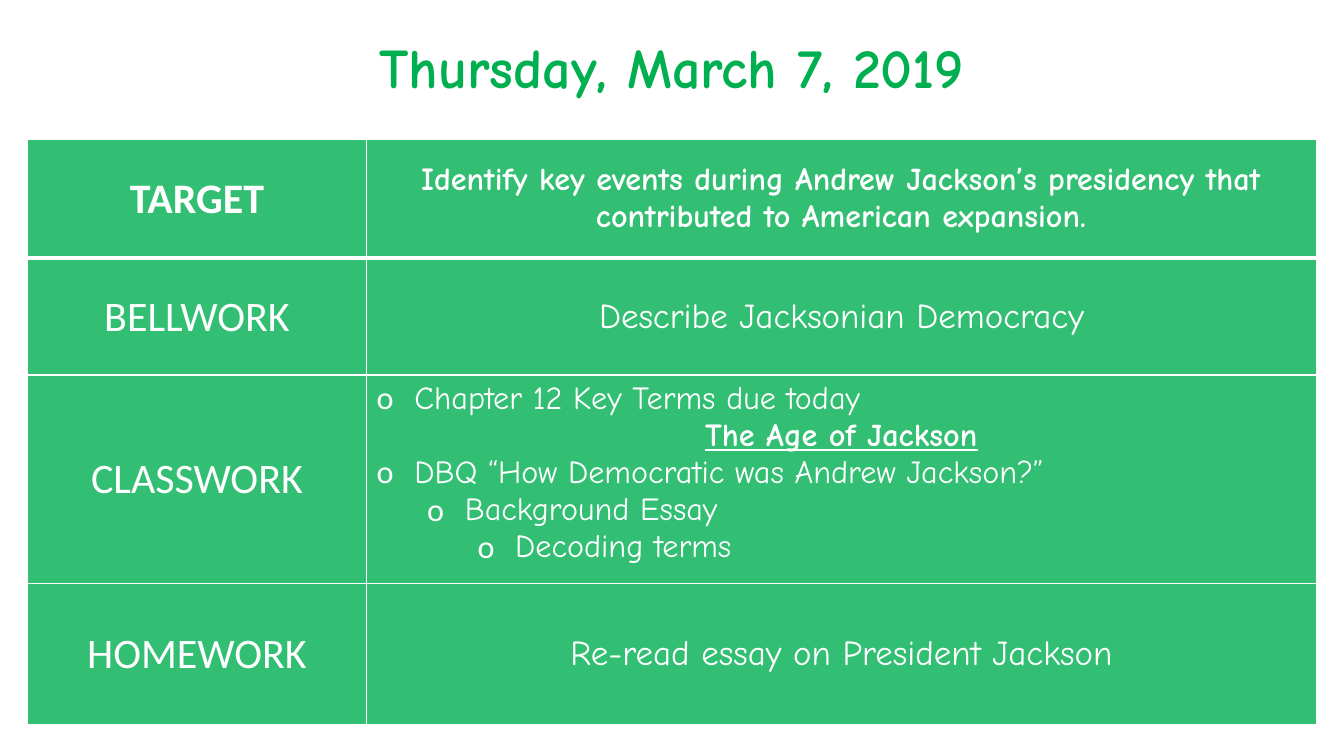
"""Build the daily agenda slide for a history class."""
import pptx
import pptx.dml.color
import pptx.enum.text
import pptx.oxml
import pptx.oxml.ns
import pptx.util
from pptx.util import Cm

GREEN = pptx.dml.color.RGBColor(0x00, 0xB0, 0x50)
WHITE = pptx.dml.color.RGBColor(0xFF, 0xFF, 0xFF)
CENTER = pptx.enum.text.PP_ALIGN.CENTER
LEFT = pptx.enum.text.PP_ALIGN.LEFT
MIDDLE = pptx.enum.text.MSO_ANCHOR.MIDDLE
TOP = pptx.enum.text.MSO_ANCHOR.TOP
NAMESPACE = pptx.oxml.ns.nsdecls("a")

COLUMN_WIDTHS = [8.55, 23.93]
ROW_HEIGHTS = [3, 2.94, 5.25, 3.56]
AGENDA = [
    ("TARGET", "Identify key events during Andrew Jackson’s presidency that contributed to American expansion.", 23),
    ("BELLWORK", "Describe Jacksonian Democracy", 25),
    ("CLASSWORK", "", 23),
    ("HOMEWORK", "Re-read essay on President Jackson", 25),
]
CLASSWORK = [
    ("Chapter 12 Key Terms due today", 0),
    ("The Age of Jackson", None),
    ("DBQ “How Democratic was Andrew Jackson?”", 0),
    ("Background Essay", 1),
    ("Decoding terms", 2),
]


def write_paragraph(paragraph, text, font_name, size, color, bold=False):
    paragraph.text = text
    paragraph.alignment = CENTER
    font = paragraph.runs[0].font
    font.name = font_name
    font.size = pptx.util.Pt(size)
    font.bold = bold
    font.color.rgb = color


def fill_translucent(fill, properties, color, opacity):
    fill.solid()
    fill.fore_color.rgb = color
    color_element = properties.find(".//" + pptx.oxml.ns.qn("a:srgbClr"))
    color_element.append(pptx.oxml.parse_xml(f'<a:alpha {NAMESPACE} val="{opacity * 1000}"/>'))


presentation = pptx.Presentation()
presentation.slide_width = Cm(33.87)
presentation.slide_height = Cm(19.05)
slide = presentation.slides.add_slide(presentation.slide_layouts[5])

title = slide.shapes.title
title.left, title.top, title.width, title.height = Cm(0.69), Cm(0.4), Cm(32.48), Cm(2.53)
fill_translucent(title.fill, title._element.spPr, WHITE, 65)
title.text_frame.auto_size = pptx.enum.text.MSO_AUTO_SIZE.NONE
title.text_frame.vertical_anchor = MIDDLE
write_paragraph(title.text_frame.paragraphs[0], "Thursday, March 7, 2019", "Comic Neue", 40, GREEN, True)

table = slide.shapes.add_table(
    len(AGENDA), 2, Cm(0.69), Cm(3.51), Cm(sum(COLUMN_WIDTHS)), Cm(sum(ROW_HEIGHTS))).table
for column, width in zip(table.columns, COLUMN_WIDTHS):
    column.width = Cm(width)

for row_index, (label, detail, size) in enumerate(AGENDA):
    table.rows[row_index].height = Cm(ROW_HEIGHTS[row_index])
    bold = row_index == 0
    cell_texts = [(label, "Calibri", 30), (detail, "Comic Neue", size)]
    for cell, (text, font_name, font_size) in zip(table.rows[row_index].cells, cell_texts):
        cell.vertical_anchor = MIDDLE
        properties = cell._tc.get_or_add_tcPr()
        fill_translucent(cell.fill, properties, GREEN, 80)
        for position, side in enumerate("LRTB"):
            thick = (row_index, side) in [(0, "B"), (1, "T")]
            width = pptx.util.Pt(3 if thick else 1)
            properties.insert(position, pptx.oxml.parse_xml(
                f'<a:ln{side} {NAMESPACE} w="{width}"><a:solidFill>'
                f'<a:srgbClr val="{WHITE}"/></a:solidFill></a:ln{side}>'))
        if text:
            write_paragraph(cell.text_frame.paragraphs[0], text, font_name, font_size, WHITE, bold)

classwork_cell = table.cell(2, 1)
classwork_cell.vertical_anchor = TOP
classwork_frame = classwork_cell.text_frame
for index, (text, level) in enumerate(CLASSWORK):
    paragraph = classwork_frame.add_paragraph() if index else classwork_frame.paragraphs[0]
    is_heading = level is None
    write_paragraph(paragraph, text, "Comic Neue", 23, WHITE, is_heading)
    if is_heading:
        paragraph.runs[0].font.underline = True
        continue
    paragraph.alignment = LEFT
    paragraph.level = level
    properties = paragraph._p.get_or_add_pPr()
    properties.set("marL", str(Cm(0.95 + 1.27 * level)))
    properties.set("indent", str(Cm(-0.95)))
    properties.append(pptx.oxml.parse_xml(f'<a:buFont {NAMESPACE} typeface="Calibri"/>'))
    properties.append(pptx.oxml.parse_xml(f'<a:buChar {NAMESPACE} char="o"/>'))

presentation.save("out.pptx")
